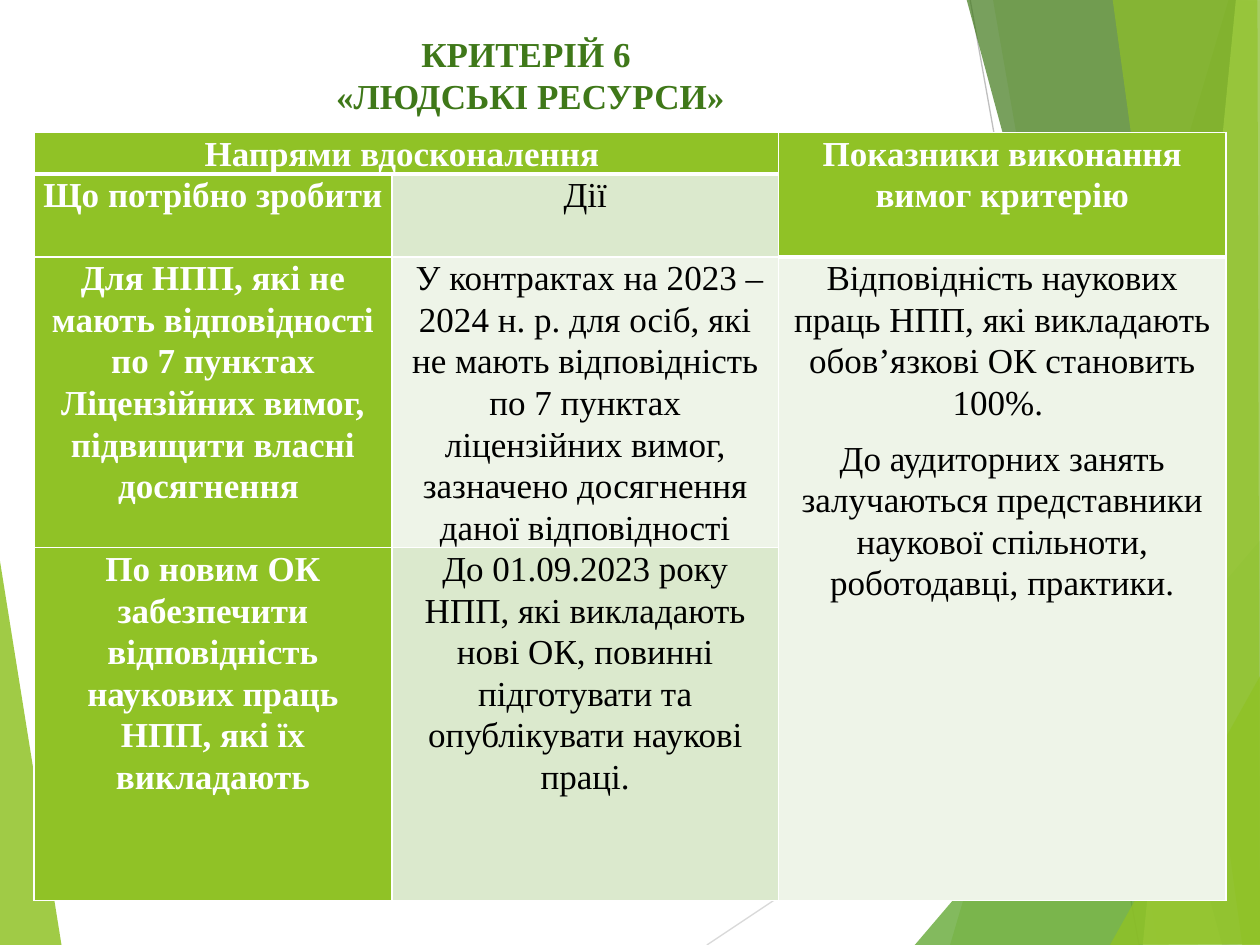
import pptx
import pptx.util
import pptx.oxml
from dataclasses import dataclass
from lxml import etree
from pptx.dml.color import RGBColor
from pptx.enum.shapes import MSO_CONNECTOR
from pptx.enum.text import MSO_ANCHOR, MSO_AUTO_SIZE, PP_ALIGN
from pptx.oxml.ns import qn
from pptx.util import Inches, Pt


@dataclass(frozen=True)
class Theme:
    font: str = "Times New Roman"
    size: float = 20
    lime: str = "90C226"
    leaf: str = "54A021"
    dark: str = "3F7819"
    pale: str = "C0E474"
    band: str = "DBE9CD"
    light: str = "EEF4E8"
    white: str = "FFFFFF"
    black: str = "000000"


THEME = Theme()

# Fill, opacity in percent, corner points
LEFT = (THEME.lime, 85, [(-0.01, 4.39), (0.49, 7.51), (-0.01, 7.5)])
RIGHT = [
    (THEME.lime, 30, [(9.75, 0), (7.54, 7.5), (10.02, 7.51), (10.01, 0.01)]),
    (THEME.lime, 20, [(7.88, -0.01), (9.19, 7.5), (10.01, 7.5), (10.01, -0.01)]),
    (THEME.leaf, 72, [(7.26, 7.5), (10, 4.29), (10.01, 7.5)]),
    (THEME.dark, 70, [(7.67, -0.01), (9.7, 7.5), (10.01, 7.49), (10.01, -0.01)]),
    (THEME.pale, 70, [(9.81, -0.01), (9.07, 7.5), (10.01, 7.5), (10, -0.01)]),
    (THEME.lime, 65, [(8.83, -0.01), (9.86, 7.5), (10, 7.5), (9.98, -0.01)]),
    (THEME.lime, 80, [(8.81, 7.5), (10.01, 5.35), (10.01, 7.49)]),
]
LINES = [("D9D9D9", (5.61, 7.5), (10.01, 4.57)),
         ("BFBFBF", (7.7, 0), (9.04, 7.5))]

TITLE = ["КРИТЕРІЙ 6 ", "«ЛЮДСЬКІ РЕСУРСИ»"]
COLS = [2.84, 3.07, 3.55]
ROWS = [0.3, 0.63, 2.25, 2.8]
MERGES = [((0, 0), (0, 1)), ((0, 2), (1, 2)), ((2, 2), (3, 2))]
CELLS = {
    (0, 0): ["Напрями вдосконалення "],
    (0, 2): ["Показники виконання вимог критерію"],
    (1, 0): ["Що потрібно зробити"],
    (1, 1): ["Дії"],
    (2, 0): ["Для НПП, які не мають відповідності по 7 пунктах Ліцензійних "
             "вимог, підвищити власні досягнення "],
    (2, 1): [" У контрактах на 2023 – 2024 н. р. для осіб, які не мають "
             "відповідність по 7 пунктах ліцензійних вимог, зазначено "
             "досягнення даної відповідності"],
    (2, 2): ["Відповідність наукових праць НПП, які викладають обов’язкові "
             "ОК становить 100%. ",
             "До аудиторних занять залучаються представники наукової "
             "спільноти, роботодавці, практики."],
    (3, 0): ["По новим ОК забезпечити відповідність наукових праць НПП, "
             "які їх викладають"],
    (3, 1): ["До 01.09.2023 року НПП, які викладають нові ОК, повинні "
             "підготувати та опублікувати наукові праці."],
}


def rgb(code):
    return RGBColor.from_string(code)


def put(item, **vals):
    for name, val in vals.items():
        setattr(item, name, val)


def write(frame, texts, color, bold, **style):
    """Fill a text frame with centred paragraphs of one look."""
    for i, text in enumerate(texts):
        para = frame.paragraphs[0] if i == 0 else frame.add_paragraph()
        put(para, alignment=PP_ALIGN.CENTER, **style)
        run = para.add_run()
        run.text = text
        put(run.font, name=THEME.font, size=Pt(THEME.size), bold=bold)
        run.font.color.rgb = rgb(color)


def add_shard(slide, color, alpha, points):
    """Draw one see-through polygon of the backdrop."""
    start, *rest = [(Inches(x), Inches(y)) for x, y in points]
    pen = slide.shapes.build_freeform(*start)
    pen.add_line_segments(rest, close=True)
    shape = pen.convert_to_shape()
    shape.shadow.inherit = False
    shape.line.fill.background()
    shape.fill.solid()
    shape.fill.fore_color.rgb = rgb(color)
    node = shape.fill._xPr.find(".//" + qn("a:srgbClr"))
    etree.SubElement(node, qn("a:alpha"), val=str(alpha * 1000))


def add_line(slide, color, start, end):
    ends = [Inches(n) for n in (*start, *end)]
    line = slide.shapes.add_connector(MSO_CONNECTOR.STRAIGHT, *ends)
    line.line.width = Pt(0.75)
    line.line.color.rgb = rgb(color)
    etree.SubElement(line._element.spPr, qn("a:effectLst"))


def add_title(slide):
    title = slide.shapes.title
    put(title, left=Inches(0.43), top=Inches(0.21),
        width=Inches(7.56), height=Inches(0.77))
    put(title.text_frame, word_wrap=True, auto_size=MSO_AUTO_SIZE.NONE,
        vertical_anchor=MSO_ANCHOR.TOP)
    write(title.text_frame, TITLE, THEME.dark, True)


def edge(cell, **widths):
    """Set white cell borders, given by side in points."""
    props = cell._tc.get_or_add_tcPr()
    for side, width in widths.items():
        line = etree.SubElement(props, qn("a:ln" + side), w=str(Pt(width)))
        fill = etree.SubElement(line, qn("a:solidFill"))
        etree.SubElement(fill, qn("a:srgbClr"), val=THEME.white)


def tint(row, col):
    if col == 0 or (row, col) in [(0, 1), (0, 2), (1, 2)]:
        return THEME.lime
    return THEME.band if col == 1 and row % 2 else THEME.light


def add_grid(slide):
    frame = slide.shapes.add_table(
        len(ROWS), len(COLS), Inches(0.27), Inches(1.05),
        Inches(sum(COLS)), Inches(sum(ROWS)))
    table = frame.table
    for col, width in zip(table.columns, COLS):
        col.width = Inches(width)
    for row, height in zip(table.rows, ROWS):
        row.height = Inches(height)
    for first, last in MERGES:
        table.cell(*first).merge(table.cell(*last))

    heads = [(0, 0), (0, 1), (0, 2), (1, 2)]
    below = [(1, 0), (1, 1), (2, 2)]
    for r in range(len(ROWS)):
        for c in range(len(COLS)):
            cell = table.cell(r, c)
            side = Inches(0.05 if r < 2 else 0.07)
            put(cell, margin_left=side, margin_right=side,
                margin_top=0, margin_bottom=0)
            edge(cell, L=1, R=1, T=3 if (r, c) in below else 1,
                 B=3 if (r, c) in heads else 1)
            cell.fill.solid()
            cell.fill.fore_color.rgb = rgb(tint(r, c))
            head = tint(r, c) == THEME.lime
            write(cell.text_frame, CELLS.get((r, c), []),
                  THEME.white if head else THEME.black, head,
                  line_spacing=1.07, space_after=Pt(8))


def main():
    deck = pptx.Presentation()
    put(deck, slide_width=Inches(10), slide_height=Inches(7.5))
    slide = deck.slides.add_slide(deck.slide_layouts[5])
    add_shard(slide, *LEFT)
    for line in LINES:
        add_line(slide, *line)
    for shard in RIGHT:
        add_shard(slide, *shard)
    add_grid(slide)
    add_title(slide)
    deck.save("out.pptx")


if __name__ == "__main__":
    main()
